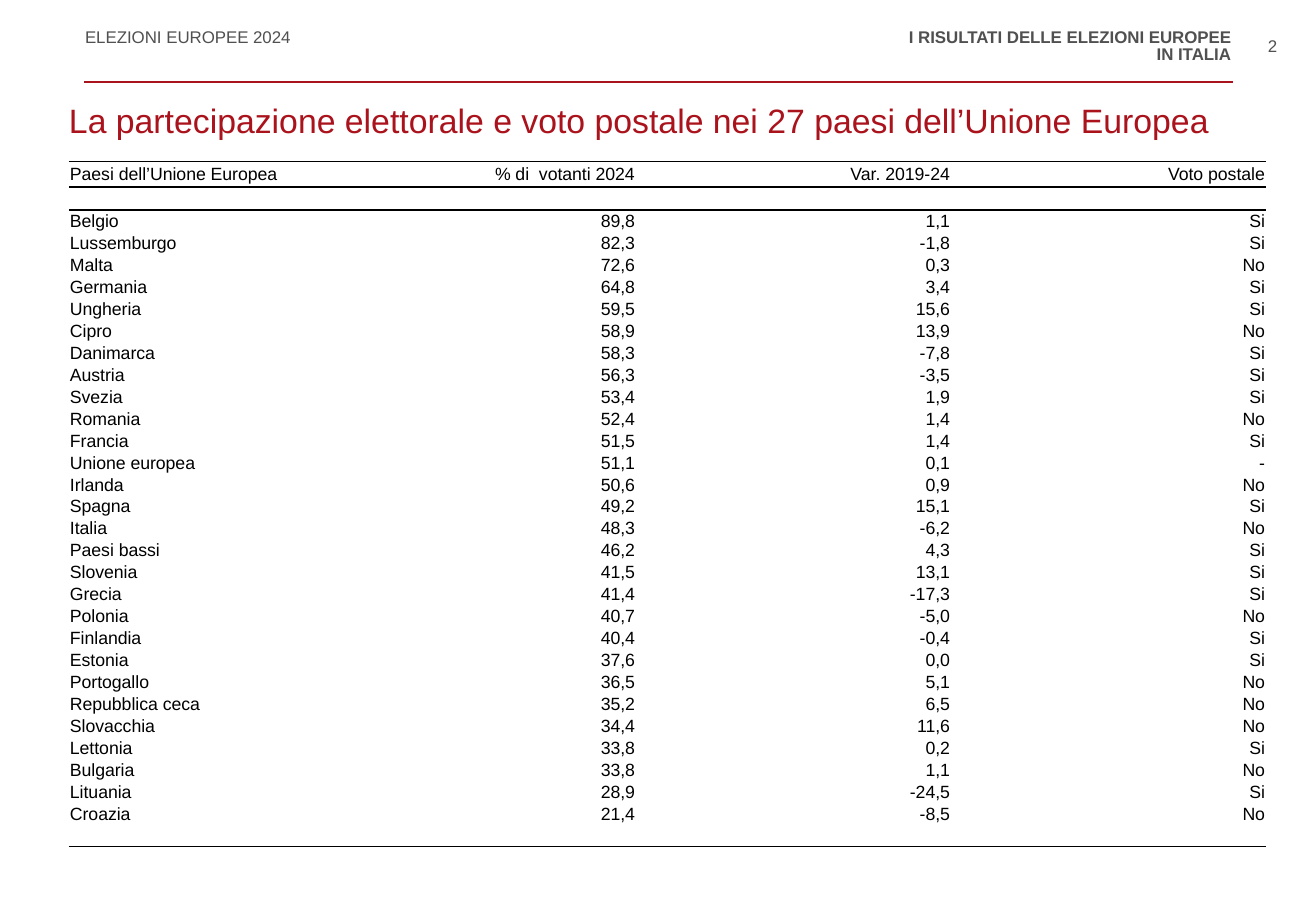
import pptx
import pptx.dml.color
import pptx.enum.shapes
import pptx.enum.text
import pptx.oxml
import pptx.oxml.ns
import pptx.util
from lxml import etree

EMU_PER_PX = 914400 / 121.5
FONT = "Arial"
RED, GREY, BLACK, WHITE = "AA121C", "505050", "000000", "FFFFFF"
ALIGN = pptx.enum.text.PP_ALIGN
ANCHOR = pptx.enum.text.MSO_ANCHOR
NO_STYLE = "{2D5ABB26-0587-4C30-8999-92F81FD0307C}"

COLUMN_WIDTHS = [252, 315, 315, 315]
HEADINGS = ["Paesi dell’Unione Europea", "% di  votanti 2024", "Var. 2019-24", "Voto postale"]
COUNTRIES = [
    ("Belgio", "89,8", "1,1", "Si"),
    ("Lussemburgo", "82,3", "-1,8", "Si"),
    ("Malta", "72,6", "0,3", "No"),
    ("Germania", "64,8", "3,4", "Si"),
    ("Ungheria", "59,5", "15,6", "Si"),
    ("Cipro", "58,9", "13,9", "No"),
    ("Danimarca", "58,3", "-7,8", "Si"),
    ("Austria", "56,3", "-3,5", "Si"),
    ("Svezia", "53,4", "1,9", "Si"),
    ("Romania", "52,4", "1,4", "No"),
    ("Francia", "51,5", "1,4", "Si"),
    ("Unione europea", "51,1", "0,1", "-"),
    ("Irlanda", "50,6", "0,9", "No"),
    ("Spagna", "49,2", "15,1", "Si"),
    ("Italia", "48,3", "-6,2", "No"),
    ("Paesi bassi", "46,2", "4,3", "Si"),
    ("Slovenia", "41,5", "13,1", "Si"),
    ("Grecia", "41,4", "-17,3", "Si"),
    ("Polonia", "40,7", "-5,0", "No"),
    ("Finlandia", "40,4", "-0,4", "Si"),
    ("Estonia", "37,6", "0,0", "Si"),
    ("Portogallo", "36,5", "5,1", "No"),
    ("Repubblica ceca", "35,2", "6,5", "No"),
    ("Slovacchia", "34,4", "11,6", "No"),
    ("Lettonia", "33,8", "0,2", "Si"),
    ("Bulgaria", "33,8", "1,1", "No"),
    ("Lituania", "28,9", "-24,5", "Si"),
    ("Croazia", "21,4", "-8,5", "No"),
]


def px(length):
    """Turn pixels into EMU."""
    return pptx.util.Emu(round(length * EMU_PER_PX))


def color(value):
    """Turn a hex string into a colour."""
    return pptx.dml.color.RGBColor.from_string(value)


def format_paragraph(paragraph, size, ink, align=ALIGN.LEFT, bold=False, spacing=None):
    """Set the font, alignment and line spacing of a paragraph."""
    paragraph.alignment = align
    paragraph.line_spacing = spacing
    paragraph.font.name = FONT
    paragraph.font.size = pptx.util.Pt(size)
    paragraph.font.bold = bold
    paragraph.font.color.rgb = color(ink)


def fill_frame(frame, lines, size, ink, margin=0, wrap=True, **style):
    """Write lines into a text frame with equal margins."""
    frame.margin_left = frame.margin_right = px(margin)
    frame.margin_top = frame.margin_bottom = px(margin)
    frame.auto_size = pptx.enum.text.MSO_AUTO_SIZE.NONE
    frame.word_wrap = wrap
    frame.vertical_anchor = ANCHOR.TOP
    frame.text = "\n".join(lines)
    for paragraph in frame.paragraphs:
        format_paragraph(paragraph, size, ink, **style)


def add_text(slide, left, top, width, height, lines, **style):
    """Add a small grey text box."""
    box = slide.shapes.add_textbox(px(left), px(top), px(width), px(height))
    fill_frame(box.text_frame, lines, 10, GREY, **style)


def add_header(slide, left, top, width):
    """Place the running header, its rule and the page number."""
    add_text(slide, left + 1, top, 505, 18, ["ELEZIONI EUROPEE 2024"], spacing=0.85)
    add_text(slide, left + width - 554, top, 552, 35,
             ["I RISULTATI DELLE ELEZIONI EUROPEE", "IN ITALIA"],
             align=ALIGN.RIGHT, bold=True, spacing=0.85)
    add_text(slide, left + width + 23, top, 33, 30, ["2"],
             margin=6, wrap=False, align=ALIGN.CENTER)
    rule = slide.shapes.add_connector(
        pptx.enum.shapes.MSO_CONNECTOR.STRAIGHT,
        px(left), px(top + 52), px(left + width), px(top + 52))
    rule.line.color.rgb = color(RED)
    rule.line.width = pptx.util.Pt(1.5)
    etree.SubElement(rule._element.spPr, pptx.oxml.ns.qn("a:effectLst"))


def add_title(slide, left, top, width, height):
    """Move and format the title placeholder."""
    title = slide.shapes.title
    title.left, title.top, title.width, title.height = map(px, (left, top, width, height))
    fill_frame(title.text_frame,
               ["La partecipazione elettorale e voto postale nei 27 paesi dell’Unione Europea"],
               20, RED, spacing=0.85)


def add_border(cell, side, points):
    """Draw a black line on one side of a cell."""
    cell._tc.get_or_add_tcPr().append(pptx.oxml.parse_xml(
        f'<a:ln{side} {pptx.oxml.ns.nsdecls("a")} w="{round(points * 12700)}">'
        f'<a:solidFill><a:srgbClr val="{BLACK}"/></a:solidFill></a:ln{side}>'))


def format_cell(cell, text, align, borders):
    """Write one cell with its margins, borders and fill."""
    cell.margin_left = cell.margin_top = cell.margin_right = px(1)
    cell.margin_bottom = 0
    cell.vertical_anchor = ANCHOR.MIDDLE
    for side, points in borders.items():
        add_border(cell, side, points)
    cell.fill.solid()
    cell.fill.fore_color.rgb = color(WHITE)
    cell.text = text
    paragraph = cell.text_frame.paragraphs[0]
    format_paragraph(paragraph, 10.5, BLACK, align)
    if not text:
        ending = etree.SubElement(paragraph._p, pptx.oxml.ns.qn("a:endParaRPr"))
        ending.set("sz", "1050")


def add_turnout_table(slide, left, top):
    """Add the turnout table, with an empty row before and after the countries."""
    empty = [""] * len(HEADINGS)
    rows = [HEADINGS, empty, *COUNTRIES, empty]
    heights = [26, 23] + [22] * (len(rows) - 2)
    borders = {0: {"T": 0.5, "B": 1}, 1: {"T": 1}, len(rows) - 1: {"B": 1}}
    table = slide.shapes.add_table(
        len(rows), len(HEADINGS), px(left), px(top),
        px(sum(COLUMN_WIDTHS)), px(sum(heights))).table
    table.first_row = table.horz_banding = False
    table._tbl.tblPr.find(pptx.oxml.ns.qn("a:tableStyleId")).text = NO_STYLE
    for column, width in zip(table.columns, COLUMN_WIDTHS):
        column.width = px(width)
    for row_index, (texts, height) in enumerate(zip(rows, heights)):
        table.rows[row_index].height = px(height)
        for column_index, text in enumerate(texts):
            format_cell(table.cell(row_index, column_index), text,
                        ALIGN.RIGHT if column_index else ALIGN.LEFT,
                        borders.get(row_index, {}))


def main():
    """Build and save the presentation."""
    presentation = pptx.Presentation()
    presentation.slide_width = px(1316)
    presentation.slide_height = px(911)
    slide = presentation.slides.add_slide(presentation.slide_layouts[5])
    add_header(slide, 84, 30, 1149)
    add_title(slide, 69, 106, 1168, 69)
    add_turnout_table(slide, 69, 161)
    presentation.save("out.pptx")


if __name__ == "__main__":
    main()
